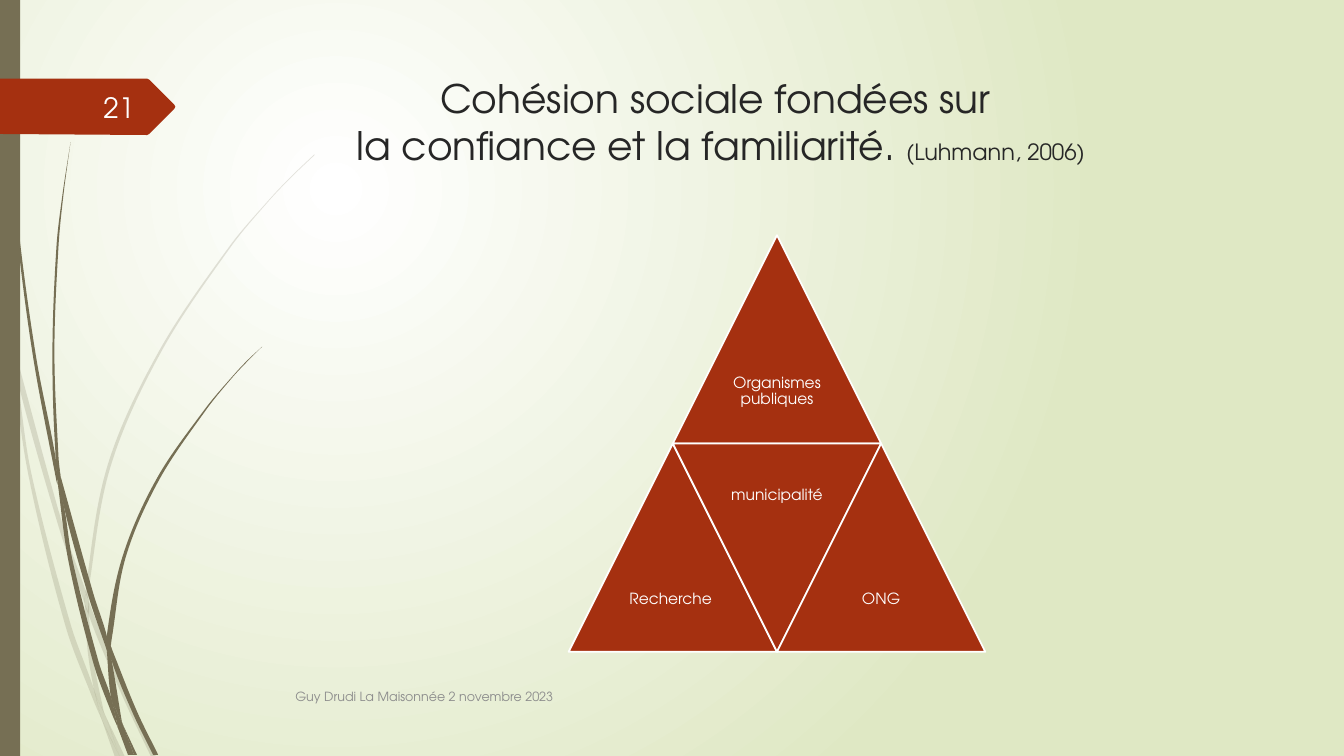
from lxml.etree import SubElement
from pptx import Presentation
from pptx.dml.color import RGBColor
from pptx.enum.shapes import MSO_SHAPE
from pptx.enum.text import MSO_ANCHOR, PP_ALIGN
from pptx.oxml.ns import qn
from pptx.util import Pt

FONT = "TeX Gyre Adventor"
GRID = 0.72
WHITE = RGBColor(0xFF, 0xFF, 0xFF)
PALE_GREEN = RGBColor(0xDF, 0xE8, 0xC4)
OLIVE = RGBColor(0x76, 0x6F, 0x54)
RUST = RGBColor(0xA5, 0x30, 0x10)
INK = RGBColor(0x26, 0x26, 0x26)
GRAY = RGBColor(0x8C, 0x8C, 0x8C)

BANNER = [(0, 78), (146, 78), (148, 79), (173, 104), (174, 106), (173, 108),
          (148, 133), (146, 134), (0, 133)]
PALE_BLADES = [
    ([(0, 299), (10, 344), (11, 350)], [(0, 282), (9, 322), (11, 350)]),
    ([(14, 345), (17, 376), (58, 522), (84, 599)], [(14, 345), (62, 520), (85, 586)]),
    ([(88, 596), (88, 610), (123, 694), (150, 751)],
     [(88, 596), (92, 607), (127, 692), (155, 751)]),
    ([(105, 711), (119, 751)], [(105, 711), (124, 751)]),
    ([(11, 350), (28, 470), (65, 621), (92, 693), (101, 714)],
     [(11, 350), (17, 376), (31, 469), (70, 619), (93, 683), (99, 707), (101, 714)]),
    ([(84, 599), (87, 646), (93, 683), (96, 692), (105, 711)],
     [(84, 599), (88, 610), (91, 646), (103, 706), (105, 711)]),
    ([(312, 153), (289, 175), (268, 197), (228, 244), (158, 348), (107, 461),
      (85, 586), (88, 596)],
     [(312, 154), (290, 175), (268, 198), (229, 245), (160, 349), (110, 462),
      (88, 584), (88, 596)]),
    ([(101, 714), (114, 751)], [(101, 714), (119, 751)]),
    ([(85, 586), (84, 599), (88, 610)], [(85, 586), (88, 596), (88, 610)]),
    ([(93, 683), (99, 707), (101, 714), (119, 751)],
     [(93, 683), (96, 692), (105, 711), (119, 751)]),
]
DARK_BLADES = [
    ([(3, 0), (4, 48), (7, 110), (17, 233), (33, 355), (56, 477), (57, 481)],
     [(4, 0), (5, 48), (8, 109), (19, 232), (36, 355), (55, 453), (57, 481)]),
    ([(60, 472), (64, 505), (88, 592), (106, 645)],
     [(60, 472), (93, 590), (106, 631), (106, 645)]),
    ([(110, 641), (111, 656), (132, 708), (152, 749)],
     [(110, 641), (113, 649), (136, 706), (157, 749)]),
    ([(57, 477), (68, 557), (93, 659), (111, 708), (117, 722)],
     [(57, 477), (64, 505), (72, 556), (98, 657), (110, 691), (116, 717), (117, 722)]),
    ([(70, 141), (62, 193), (56, 245), (52, 349), (55, 449), (60, 472)],
     [(70, 141), (63, 193), (58, 245), (54, 349), (58, 453), (60, 472)]),
    ([(122, 719), (133, 749)], [(122, 719), (136, 749)]),
    ([(55, 449), (57, 477), (64, 505)], [(55, 449), (60, 472), (64, 505)]),
    ([(260, 344), (245, 358), (231, 373), (204, 405), (156, 474), (122, 551),
      (106, 631), (110, 641)],
     [(260, 344), (245, 359), (231, 374), (205, 406), (158, 476), (125, 552),
      (111, 633), (110, 641)]),
    ([(117, 722), (127, 749)], [(117, 722), (131, 749)]),
    ([(106, 645), (110, 691), (116, 706), (122, 719)],
     [(106, 645), (109, 651), (111, 656), (121, 716), (122, 719)]),
    ([(106, 631), (106, 645), (111, 656)], [(106, 631), (110, 641), (111, 656)]),
    ([(110, 691), (116, 717), (117, 722), (130, 749)],
     [(110, 691), (116, 706), (122, 719), (133, 749)]),
]


def set_background(slide):
    """Fill the background with a white to pale green circular gradient."""
    fill = slide.background.fill
    fill.gradient()
    for stop, color, position in zip(fill.gradient_stops, (WHITE, PALE_GREEN), (0, 1)):
        stop.color.rgb = color
        stop.position = position
    linear = slide.element.find(".//" + qn("a:lin"))
    gradient = linear.getparent()
    gradient.remove(linear)
    circle = SubElement(gradient, qn("a:path"), path="circle")
    SubElement(circle, qn("a:fillToRect"), l="50000", t="50000", r="100000", b="100000")


def paint(shape, color, line=None, opacity=100):
    """Give a shape a flat fill, an optional outline and no shadow."""
    shape.shadow.inherit = False
    shape.fill.solid()
    shape.fill.fore_color.rgb = color
    if opacity < 100:
        rgb = shape.element.spPr.find(".//" + qn("a:srgbClr"))
        SubElement(rgb, qn("a:alpha"), val=str(opacity * 1000))
    if line is None:
        shape.line.fill.background()
    else:
        shape.line.color.rgb = line
        shape.line.width = Pt(1.25)


def add_block(slide, kind, box, color, line=None):
    """Add a painted preset shape."""
    shape = slide.shapes.add_shape(kind, *map(Pt, box))
    paint(shape, color, line)
    return shape


def add_text(slide, box, *runs, color=WHITE, align=PP_ALIGN.LEFT,
             anchor=MSO_ANCHOR.MIDDLE, inset=(7.2, 3.6), spacing=1):
    """Add a text box from (text, size) runs, where a newline breaks the line."""
    frame = slide.shapes.add_textbox(*map(Pt, box)).text_frame
    frame.word_wrap = True
    frame.vertical_anchor = anchor
    frame.margin_left = frame.margin_right = Pt(inset[0])
    frame.margin_top = frame.margin_bottom = Pt(inset[1])
    paragraph = frame.paragraphs[0]
    paragraph.alignment = align
    paragraph.line_spacing = spacing
    for text, size in runs:
        for index, part in enumerate(text.split("\n")):
            if index:
                paragraph.add_line_break()
            run = paragraph.add_run()
            run.text = part
            run.font.name = FONT
            run.font.size = Pt(size)
            run.font.color.rgb = color


def add_outline(slide, points, color, opacity=100):
    """Add a closed outline given in grid units."""
    corners = [(Pt(x * GRID), Pt(y * GRID)) for x, y in points]
    builder = slide.shapes.build_freeform(*corners[0])
    builder.add_line_segments(corners[1:], close=True)
    shape = builder.convert_to_shape()
    paint(shape, color, opacity=opacity)
    return shape


def edge_slopes(edge):
    """Return the sideways slope at each point of an edge."""
    last = len(edge) - 1
    pairs = [(edge[max(i - 1, 0)], edge[min(i + 1, last)]) for i in range(last + 1)]
    return [(after[0] - before[0]) / (after[1] - before[1]) for before, after in pairs]


def add_blade(slide, left_edge, right_edge, opacity=100):
    """Add a grass blade whose two edges are smooth curves."""
    points = left_edge + right_edge[::-1]
    slopes = edge_slopes(left_edge) + edge_slopes(right_edge)[::-1]
    shape = add_outline(slide, points, OLIVE, opacity)
    segments = list(shape.element.iter(qn("a:lnTo")))
    for index, segment in enumerate(segments[:len(points) - 1]):
        if index == len(left_edge) - 1:
            continue
        (x0, y0), (x1, y1) = points[index:index + 2]
        third = (y1 - y0) / 3
        controls = [(x0 + slopes[index] * third, y0 + third),
                    (x1 - slopes[index + 1] * third, y1 - third)]
        segment.tag = qn("a:cubicBezTo")
        for place, (x, y) in enumerate(controls):
            control = SubElement(segment, qn("a:pt"), x=str(Pt(x * GRID) - shape.left),
                                 y=str(Pt(y * GRID) - shape.top))
            segment.insert(place, control)


def add_pyramid(slide, left, top, side):
    """Add four labelled triangles that form one large triangle."""
    half = side / 2
    triangles = [("Organismes publiques", half, 0, False), ("Recherche ", 0, side, False),
                 ("municipalité", half, side, True), ("ONG", side, side, False)]
    for label, dx, dy, inverted in triangles:
        x, y = left + dx, top + dy
        triangle = add_block(slide, MSO_SHAPE.ISOSCELES_TRIANGLE, (x, y, side, side),
                             RUST, line=WHITE)
        triangle.rotation = 180 if inverted else 0
        label_top = y if inverted else y + half
        add_text(slide, (x + half / 2, label_top, half, half), (label, 11),
                 align=PP_ALIGN.CENTER, inset=(3.3, 3.3), spacing=0.9)


def main():
    """Build the slide and save it."""
    presentation = Presentation()
    presentation.slide_width, presentation.slide_height = Pt(960), Pt(540)
    slide = presentation.slides.add_slide(presentation.slide_layouts[6])
    set_background(slide)
    for blades, opacity in ((PALE_BLADES, 20), (DARK_BLADES, 100)):
        for left_edge, right_edge in blades:
            add_blade(slide, left_edge, right_edge, opacity)
    add_block(slide, MSO_SHAPE.RECTANGLE, (0, 0, 14.4, 540), OLIVE)
    add_outline(slide, BANNER, RUST)
    add_text(slide, (123.8, 49.5, 782, 100.8),
             ("Cohésion sociale fondées sur \nla confiance et la familiarité. ", 28),
             ("(Luhmann, 2006)", 16),
             color=INK, align=PP_ALIGN.CENTER, anchor=MSO_ANCHOR.TOP)
    add_pyramid(slide, 406.2, 168, 148.8)
    add_text(slide, (203.8, 483.1, 600, 28.8),
             ("Guy Drudi La Maisonnée 2 novembre 2023", 9), color=GRAY)
    add_text(slide, (41.8, 61.9, 61.2, 28.8), ("21", 20), align=PP_ALIGN.RIGHT)
    presentation.save("out.pptx")


if __name__ == "__main__":
    main()
